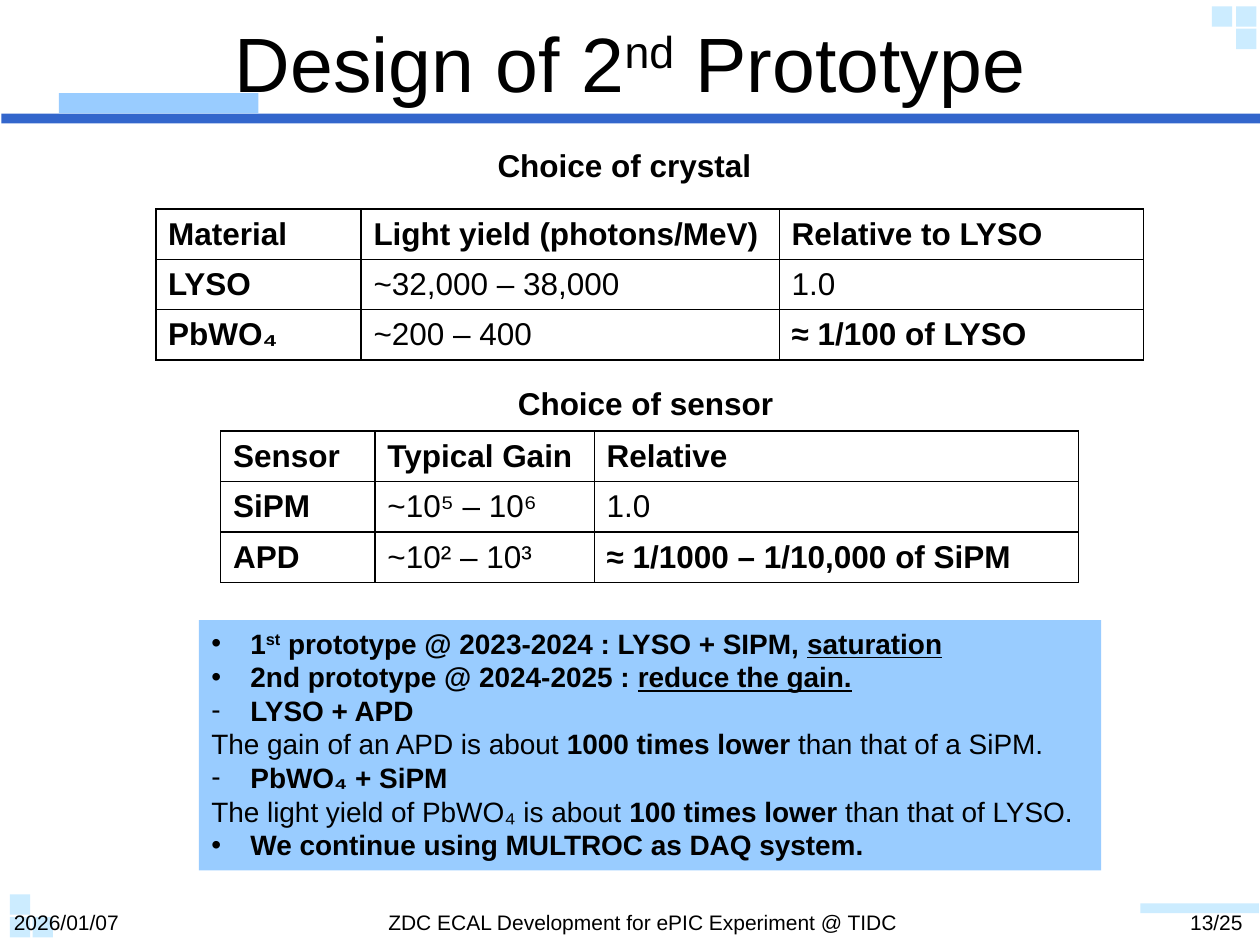
"""Build the slide on the crystal and sensor choices for the second prototype."""
from dataclasses import dataclass

from lxml import etree
from pptx import Presentation
from pptx import util as u
from pptx.dml import color
from pptx.enum import shapes, text
from pptx.oxml import ns


@dataclass(frozen=True)
class Theme:
    font: str = "Arial"
    ink: color.RGBColor = color.RGBColor(0, 0, 0)
    bar: color.RGBColor = color.RGBColor(0x33, 0x66, 0xCC)
    panel: color.RGBColor = color.RGBColor(0x99, 0xCC, 0xFF)
    pale: color.RGBColor = color.RGBColor(0xCC, 0xEC, 0xFF)
    title: int = 44
    heading: int = 18
    body: int = 16
    footer: int = 12


THEME = Theme()
LEFT, CENTER, RIGHT = text.PP_ALIGN.LEFT, text.PP_ALIGN.CENTER, text.PP_ALIGN.RIGHT


def write(paragraph, pieces, size, align=LEFT):
    """Add (words, marks) runs; marks: b bold, u underlined, ^ superscript."""
    paragraph.alignment = align
    for words, marks in pieces:
        run = paragraph.add_run()
        run.text = words
        run.font.name, run.font.size = THEME.font, u.Pt(size)
        run.font.color.rgb = THEME.ink
        run.font.bold = "b" in marks
        run.font.underline = "u" in marks
        if "^" in marks:
            run.font._element.set("baseline", "30000")


def block(left, top, width, height, fill):
    """Draw a plain filled rectangle, measured in centimetres."""
    rect = slide.shapes.add_shape(shapes.MSO_SHAPE.RECTANGLE, *map(u.Cm, (left, top, width, height)))
    rect.shadow.inherit = False
    rect.fill.solid()
    rect.fill.fore_color.rgb = fill
    rect.line.fill.background()
    return rect


deck = Presentation()
deck.slide_width, deck.slide_height = u.Cm(25.4), u.Cm(19.05)
slide = deck.slides.add_slide(deck.slide_layouts[6])

for left, top in [(0.2, 18.49), (0.66, 18.49), (0.2, 18.03),
                  (24.92, 0.13), (24.43, 0.13), (24.92, 0.58)]:
    block(left, top, 0.41, 0.41, THEME.pale)
block(0.03, 2.29, 25.42, 0.2, THEME.bar)
block(1.19, 1.88, 4.02, 0.41, THEME.panel)
block(22.99, 18.21, 2.39, 0.2, THEME.pale)

labels = [
    ((0.03, 0.13, 25.35, 2.21), [("Design of 2", ""), ("nd", "^"), (" Prototype", "")], THEME.title, CENTER),
    ((0.03, 18.21, 5.08, 0.84), [("2026/01/07", "")], THEME.footer, LEFT),
    ((5.11, 18.21, 15.7, 0.84), [("ZDC ECAL Development for ePIC Experiment @ TIDC", "")], THEME.footer, CENTER),
    ((20.8, 18.21, 4.5, 0.84), [("13/25", "")], THEME.footer, RIGHT),
    ((9.78, 2.82, 5.79, 1.02), [("Choice of crystal", "b")], THEME.heading, LEFT),
    ((10.19, 7.62, 5.79, 1.02), [("Choice of sensor", "b")], THEME.heading, LEFT),
]
for place, pieces, size, align in labels:
    frame = slide.shapes.add_textbox(*map(u.Cm, place)).text_frame
    frame.word_wrap = True
    if size == THEME.title:
        frame.vertical_anchor = text.MSO_ANCHOR.MIDDLE
    write(frame.paragraphs[0], pieces, size, align)

crystals = [
    ["Material", "Light yield (photons/MeV)", "Relative to LYSO"],
    ["LYSO", "~32,000 – 38,000", "1.0"],
    ["PbWO₄", "~200 – 400", "≈ 1/100 of LYSO"],
]
sensors = [
    ["Sensor", "Typical Gain", "Relative"],
    ["SiPM", "~10⁵ – 10⁶", "1.0"],
    ["APD", "~10² – 10³", "≈ 1/1000 – 1/10,000 of SiPM"],
]
row_height = 0.97
for left, top, widths, rows in [(3.14, 4.21, (4.14, 8.43, 7.34), crystals),
                                (4.45, 8.69, (3.11, 4.42, 9.76), sensors)]:
    grid = slide.shapes.add_table(
        len(rows), len(widths), u.Cm(left), u.Cm(top),
        u.Cm(sum(widths)), u.Cm(row_height * len(rows))).table
    grid.first_row = grid.horz_banding = False
    for column, width in zip(grid.columns, widths):
        column.width = u.Cm(width)
    for r, row in enumerate(rows):
        grid.rows[r].height = u.Cm(row_height)
        for c, words in enumerate(row):
            cell = grid.cell(r, c)
            cell.vertical_anchor = text.MSO_ANCHOR.MIDDLE
            cell.margin_left = cell.margin_right = u.Cm(0.25)
            bold = r == 0 or c == 0 or r == c == 2
            write(cell.text_frame.paragraphs[0], [(words, "b" if bold else "")], THEME.heading)
            borders = cell._tc.get_or_add_tcPr()
            for side in ("a:lnL", "a:lnR", "a:lnT", "a:lnB"):
                edge = etree.SubElement(borders, ns.qn(side), w=str(u.Pt(1)))
                ink = etree.SubElement(edge, ns.qn("a:solidFill"))
                etree.SubElement(ink, ns.qn("a:srgbClr"), val=str(THEME.ink))
            cell.fill.background()

plan = [
    ("•", [("1", "b"), ("st", "b^"), (" prototype @ 2023-2024 : LYSO + SIPM, ", "b"), ("saturation", "bu")]),
    ("•", [("2nd prototype @ 2024-2025 : ", "b"), ("reduce the gain.", "bu")]),
    ("-", [("LYSO + APD", "b")]),
    ("", [("The gain of an APD is about ", ""), ("1000 times lower", "b"), (" than that of a SiPM.", "")]),
    ("-", [("PbWO₄ + SiPM", "b")]),
    ("", [("The light yield of PbWO₄ is about ", ""), ("100 times lower", "b"), (" than that of LYSO.", "")]),
    ("•", [("We continue using MULTROC as DAQ system.", "b")]),
]
summary = block(4.01, 12.5, 18.19, 5.05, THEME.panel).text_frame
summary.word_wrap = True
summary.vertical_anchor = text.MSO_ANCHOR.TOP
for index, (bullet, pieces) in enumerate(plan):
    line = summary.add_paragraph() if index else summary.paragraphs[0]
    if bullet:
        indent = line._p.get_or_add_pPr()
        indent.set("marL", str(u.Cm(0.79)))
        indent.set("indent", str(-u.Cm(0.79)))
        tint = etree.SubElement(indent, ns.qn("a:buClr"))
        etree.SubElement(tint, ns.qn("a:srgbClr"), val=str(THEME.ink))
        etree.SubElement(indent, ns.qn("a:buFont"), typeface=THEME.font)
        etree.SubElement(indent, ns.qn("a:buChar"), char=bullet)
    write(line, pieces, THEME.body)

deck.save("out.pptx")
